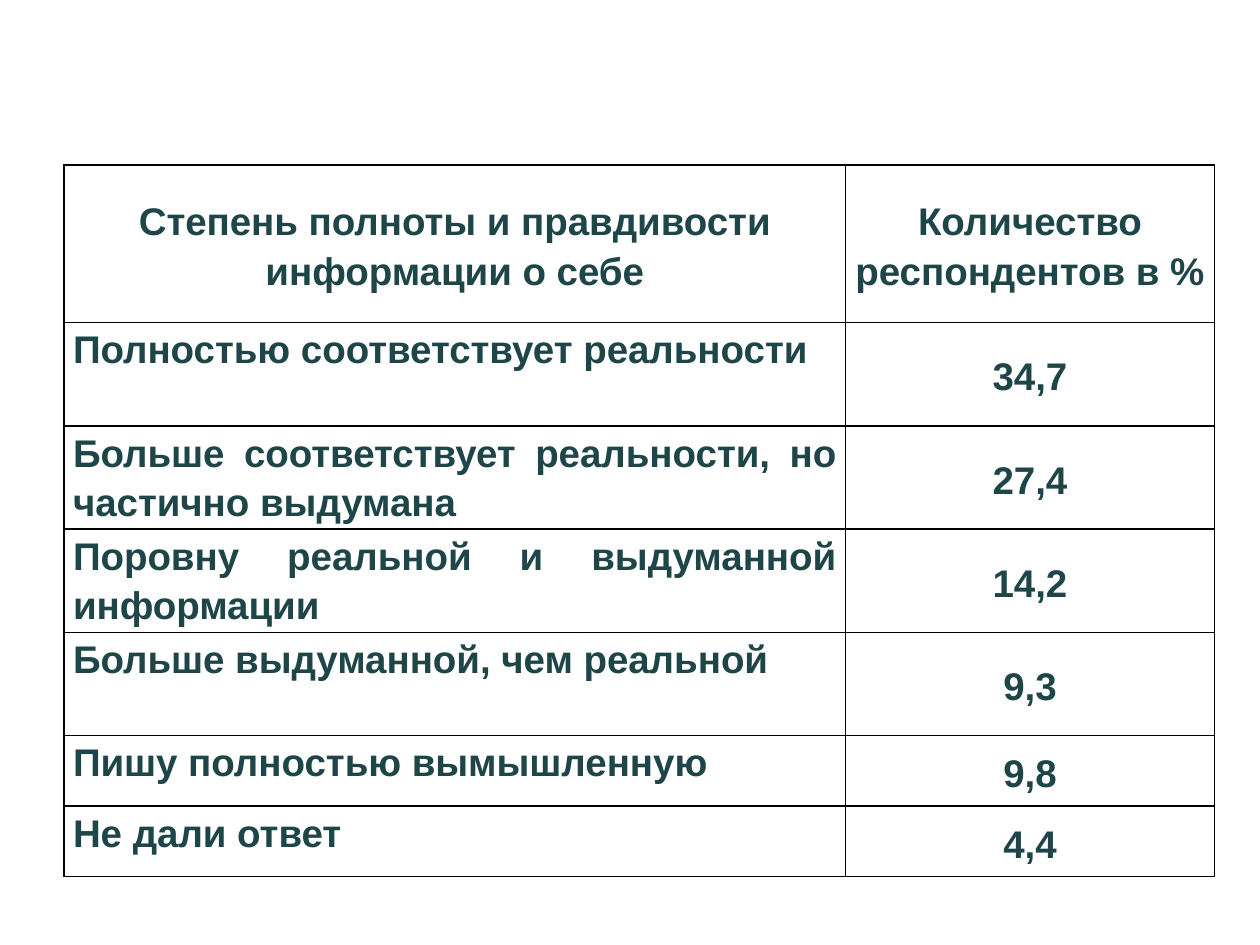
from dataclasses import dataclass

from lxml import etree
from pptx import Presentation
from pptx.dml.color import RGBColor
from pptx.enum.text import MSO_ANCHOR, PP_ALIGN
from pptx.oxml.ns import qn
from pptx.util import Inches, Pt

CENTER, JUSTIFY = PP_ALIGN.CENTER, PP_ALIGN.JUSTIFY
TOP, MIDDLE = MSO_ANCHOR.TOP, MSO_ANCHOR.MIDDLE


@dataclass(frozen=True)
class Theme:
    font: str = "Arial"
    size: int = 22
    line_spacing: float = 1.15
    text: str = "1E4649"
    background: str = "FFFFFF"
    border: str = "000000"
    border_width: int = 1


class SlideBuilder:
    def __init__(self, slide, theme):
        self.slide = slide
        self.theme = theme

    def background(self):
        fill = self.slide.background.fill
        fill.solid()
        fill.fore_color.rgb = RGBColor.from_string(self.theme.background)

    def borders(self, cell):
        properties = cell._tc.get_or_add_tcPr()
        for index, side in enumerate(("a:lnL", "a:lnR", "a:lnT", "a:lnB")):
            line = etree.Element(qn(side), w=str(Pt(self.theme.border_width)))
            fill = etree.SubElement(line, qn("a:solidFill"))
            etree.SubElement(fill, qn("a:srgbClr"), val=self.theme.border)
            properties.insert(index, line)

    def cell(self, cell, text, align, anchor):
        cell.fill.background()
        cell.vertical_anchor = anchor
        cell.margin_left = cell.margin_right = Inches(0.07)
        cell.margin_top = cell.margin_bottom = 0
        paragraph = cell.text_frame.paragraphs[0]
        paragraph.alignment = align
        paragraph.line_spacing = self.theme.line_spacing
        run = paragraph.add_run()
        run.text = text
        run.font.name = self.theme.font
        run.font.size = Pt(self.theme.size)
        run.font.bold = True
        run.font.color.rgb = RGBColor.from_string(self.theme.text)
        self.borders(cell)

    def table(self, left, top, widths, heights, rows):
        table = self.slide.shapes.add_table(
            len(rows), len(widths), Inches(left), Inches(top),
            Inches(sum(widths)), Inches(sum(heights))).table
        table.horz_banding = False
        for column, width in zip(table.columns, widths):
            column.width = Inches(width)
        for row, height in zip(table.rows, heights):
            row.height = Inches(height)
        for r, texts in enumerate(rows):
            for c, text in enumerate(texts):
                is_answer = r > 0 and c == 0
                align, anchor = (JUSTIFY, TOP) if is_answer else (CENTER, MIDDLE)
                self.cell(table.cell(r, c), text, align, anchor)


SURVEY = [
    ("Степень полноты и правдивости информации о себе",
     "Количество респондентов в %"),
    ("Полностью соответствует реальности", "34,7"),
    ("Больше соответствует реальности, но частично выдумана", "27,4"),
    ("Поровну реальной и выдуманной информации", "14,2"),
    ("Больше выдуманной, чем реальной", "9,3"),
    ("Пишу полностью вымышленную", "9,8"),
    ("Не дали ответ", "4,4"),
]


def main():
    presentation = Presentation()
    presentation.slide_width = Inches(10)
    presentation.slide_height = Inches(7.5)
    slide = presentation.slides.add_slide(presentation.slide_layouts[6])
    builder = SlideBuilder(slide, Theme())
    builder.background()

    # Survey results: header, four tall rows, two short rows
    heights = [1.25] + [0.82] * 4 + [0.56] * 2
    builder.table(0.51, 1.31, [6.2, 2.93], heights, SURVEY)

    presentation.save("out.pptx")


if __name__ == "__main__":
    main()
